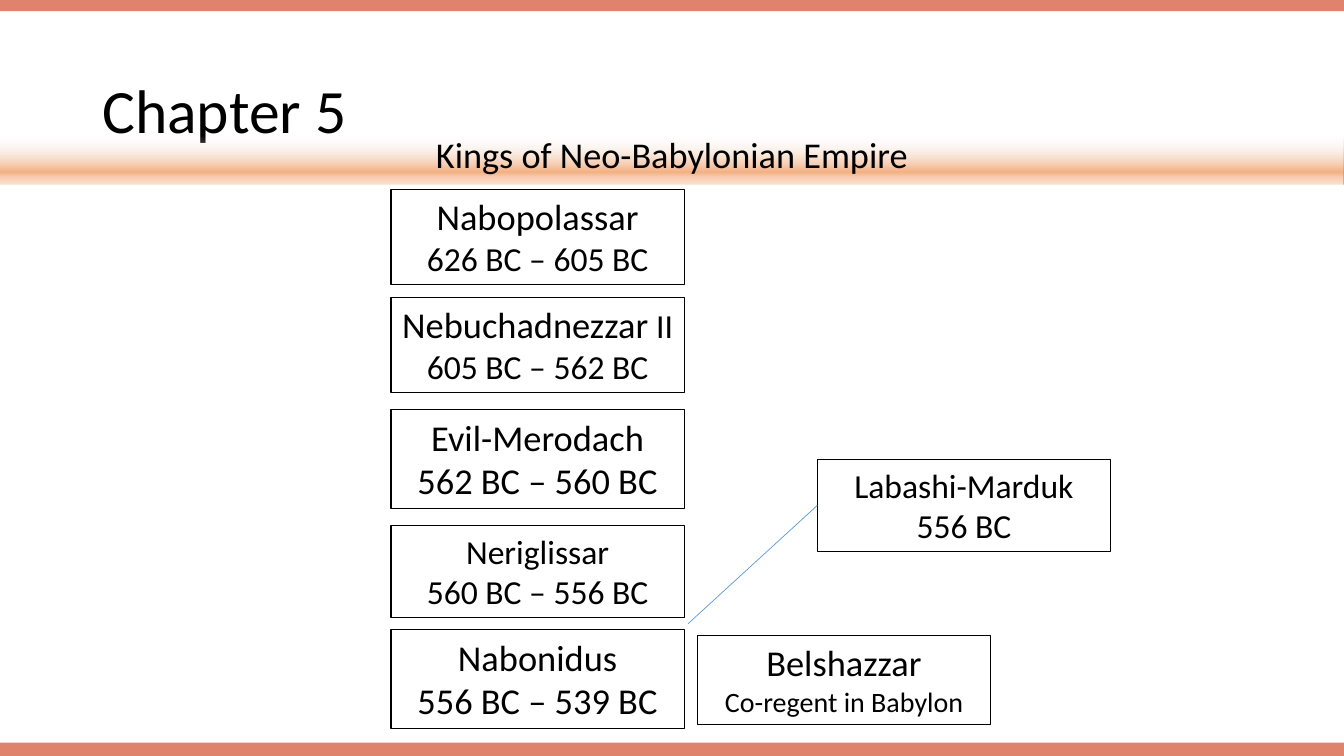
from lxml.etree import SubElement
from pptx import Presentation
from pptx.dml.color import RGBColor
from pptx.enum.shapes import MSO_CONNECTOR, MSO_SHAPE
from pptx.enum.text import MSO_ANCHOR, MSO_AUTO_SIZE, PP_ALIGN
from pptx.oxml import parse_xml
from pptx.oxml.ns import nsdecls, qn
from pptx.util import Pt

TITLE = "Chapter 5"
SUBTITLE = "Kings of Neo-Babylonian Empire"
FONT = "Calibri"
COLORS = {"text": "000000", "bar": "D24726", "link": "5B9BD5"}
BAND_STOPS = [(0, "F7FAFD", 0), (74, "F4B183", 100), (83, "F8CBAD", 100), (100, "FBE5D6", 100)]
BAR_OPACITY = 67
WIDTH, HEIGHT = 960, 540
BARS = [(0, 7.9), (530.5, 9.5)]
KING_LEFT, KING_WIDTH = 279.3, 209.5
LINE_FACTOR, BOX_PADDING = 1.22, 7.2

KINGS = [
    (KING_LEFT, 135.3, [[("Nabopolassar", 26)], [("626 BC – 605 BC", 24)]]),
    (KING_LEFT, 212.4, [[("Nebuchadnezzar", 26), (" II", 24)], [("605 BC – 562 BC", 24)]]),
    (KING_LEFT, 292.7, [[("Evil-Merodach", 26)], [("562 BC – 560 BC", 26)]]),
    (KING_LEFT, 375.6, [[("Neriglissar", 24)], [("560 BC – 556 BC", 24)]]),
    (KING_LEFT, 450, [[("Nabonidus", 26)], [("556 BC – 539 BC", 26)]]),
    (498.2, 454, [[("Belshazzar", 26)], [("Co-regent in Babylon", 20)]]),
    (583.8, 328.3, [[("Labashi-Marduk", 24)], [("556 BC", 24)]]),
]
LINK = (491.5, 445.5, 583.8, 361)


def color(name):
    return RGBColor.from_string(COLORS[name])


def add_rectangle(page, left, top, width, height):
    box = page.shapes.add_shape(MSO_SHAPE.RECTANGLE, Pt(left), Pt(top), Pt(width), Pt(height))
    box.shadow.inherit = False
    box.fill.background()
    box.line.fill.background()
    box.text_frame.word_wrap = True
    return box


def add_span(para, text, size):
    span = para.add_run()
    span.text = text
    span.font.name = FONT
    span.font.size = Pt(size)
    span.font.color.rgb = color("text")


def add_bar(page, top, height):
    bar = add_rectangle(page, 0, top, WIDTH, height)
    bar.fill.solid()
    bar.fill.fore_color.rgb = color("bar")
    tint = bar.fill._xPr.find(qn("a:solidFill"))[0]
    SubElement(tint, qn("a:alpha")).set("val", str(BAR_OPACITY * 1000))


def add_title(page):
    box = page.shapes.add_textbox(Pt(66), Pt(28.8), Pt(828), Pt(104.4))
    box.text_frame.word_wrap = True
    box.text_frame.vertical_anchor = MSO_ANCHOR.MIDDLE
    para = box.text_frame.paragraphs[0]
    para.line_spacing = 0.9
    add_span(para, TITLE, 44)


def add_king(page, left, top, lines):
    height = BOX_PADDING + LINE_FACTOR * sum(line[0][1] for line in lines)
    box = add_rectangle(page, left, top, KING_WIDTH, height)
    box.line.color.rgb = color("text")
    box.line.width = Pt(0.75)
    frame = box.text_frame
    frame.auto_size = MSO_AUTO_SIZE.SHAPE_TO_FIT_TEXT
    frame.vertical_anchor = MSO_ANCHOR.TOP
    for index, line in enumerate(lines):
        para = frame.add_paragraph() if index else frame.paragraphs[0]
        para.alignment = PP_ALIGN.CENTER
        for text, size in line:
            add_span(para, text, size)


def add_band(page):
    band = add_rectangle(page, 0, 97.2, WIDTH, 34.4)
    stops = "".join(
        f'<a:gs pos="{place * 1000}"><a:srgbClr val="{tint}">'
        f'<a:alpha val="{opacity * 1000}"/></a:srgbClr></a:gs>'
        for place, tint, opacity in BAND_STOPS
    )
    gradient = parse_xml(
        f'<a:gradFill {nsdecls("a")} rotWithShape="1"><a:gsLst>{stops}</a:gsLst>'
        '<a:lin ang="5400000" scaled="0"/></a:gradFill>'
    )
    properties = band.fill._xPr
    properties.replace(properties.find(qn("a:noFill")), gradient)
    band.text_frame.vertical_anchor = MSO_ANCHOR.TOP
    para = band.text_frame.paragraphs[0]
    para.alignment = PP_ALIGN.CENTER
    para.line_spacing = 0.8
    add_span(para, SUBTITLE, 25.9)


def add_link(page):
    link = page.shapes.add_connector(MSO_CONNECTOR.STRAIGHT, *map(Pt, LINK))
    link.line.color.rgb = color("link")
    link.line.width = Pt(0.5)
    SubElement(link._element.spPr, qn("a:effectLst"))


def main():
    deck = Presentation()
    deck.slide_width, deck.slide_height = Pt(WIDTH), Pt(HEIGHT)
    page = deck.slides.add_slide(deck.slide_layouts[6])
    for top, height in BARS:
        add_bar(page, top, height)
    add_title(page)
    add_band(page)
    for king in KINGS:
        add_king(page, *king)
    add_link(page)
    deck.save("out.pptx")


if __name__ == "__main__":
    main()
